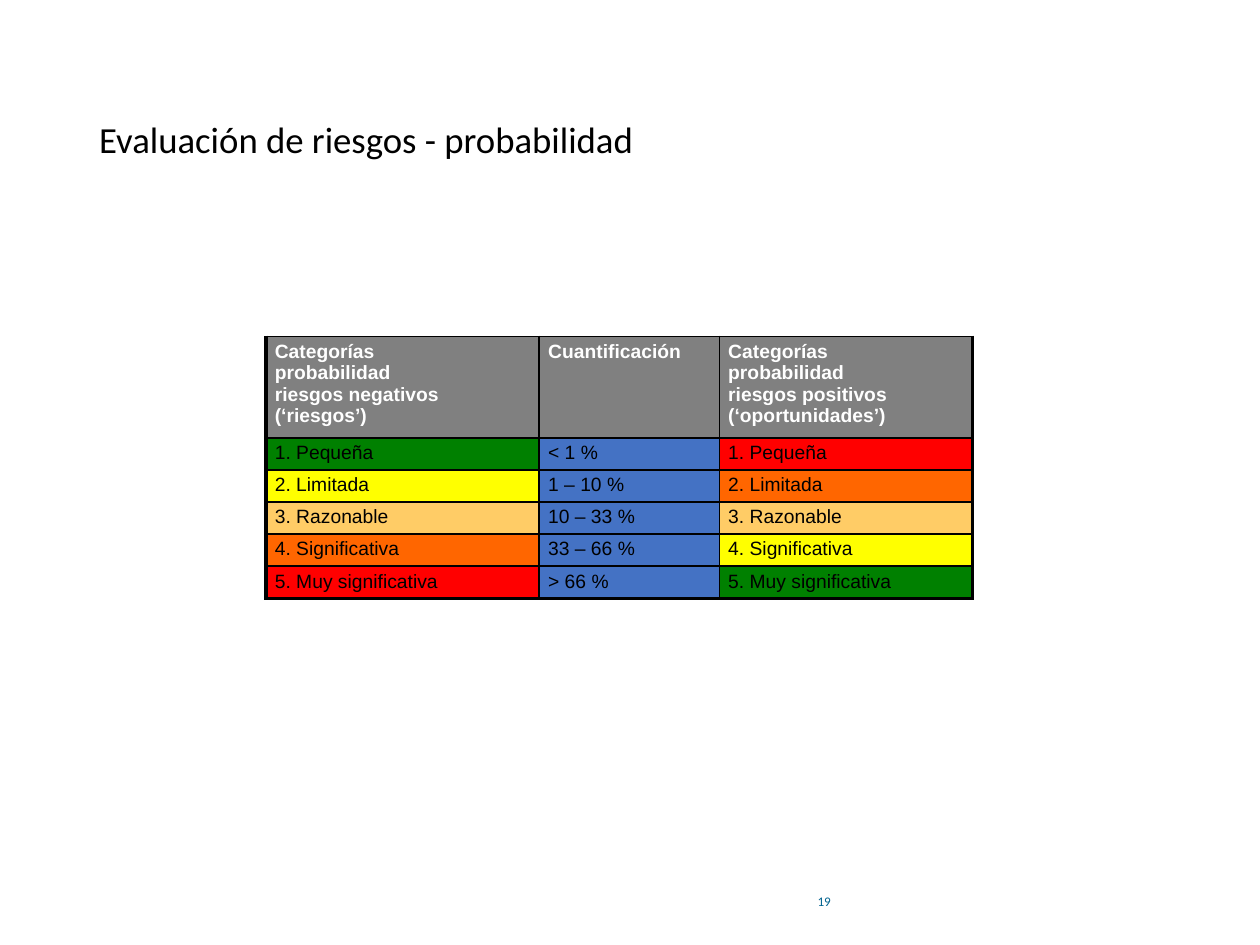
from dataclasses import dataclass

from lxml.etree import SubElement
from pptx import Presentation
from pptx.dml.color import RGBColor
from pptx.enum.text import MSO_ANCHOR, PP_ALIGN
from pptx.oxml.ns import qn
from pptx.util import Cm, Pt

COLORS = {
    "black": "000000", "white": "FFFFFF", "teal": "00638F", "gray": "808080",
    "blue": "4472C4", "green": "008000", "yellow": "FFFF00", "sand": "FFCC66",
    "orange": "FF6600", "red": "FF0000",
}
HEADERS = [
    ["Categorías", "probabilidad", "riesgos negativos (‘riesgos’)"],
    ["Cuantificación"],
    ["Categorías", "probabilidad", "riesgos positivos (‘oportunidades’)"],
]
COLUMN_WIDTHS = [5.51, 3.63, 5.11]
HEADER_HEIGHT, ROW_HEIGHT = 1.98, 0.64
THIN, THICK = 1, 2.25


@dataclass
class Level:
    category: str
    range: str
    color: str


@dataclass
class Label:
    text: str
    left: float
    top: float
    width: float
    height: float
    size: float
    color: str
    align: PP_ALIGN
    spacing: float


LEVELS = [
    Level("1. Pequeña", "< 1 %", "green"),
    Level("2. Limitada", "1 – 10 %", "yellow"),
    Level("3. Razonable", "10 – 33 %", "sand"),
    Level("4. Significativa", "33 – 66 %", "orange"),
    Level("5. Muy significativa", "> 66 %", "red"),
]
LABELS = [
    Label("Evaluación de riesgos - probabilidad", 1.75, 1.02, 21.9, 3.68,
          21, "black", PP_ALIGN.LEFT, 0.9),
    Label("19", 8.41, 17.65, 8.59, 1.02, 7.5, "teal", PP_ALIGN.RIGHT, 1.0),
]


def add_span(para, text: str, font: str, size: float, color: str, bold: bool = False) -> None:
    """Add one formatted run to a paragraph."""
    span = para.add_run()
    span.text = text
    span.font.name = font
    span.font.size = Pt(size)
    span.font.bold = bold
    span.font.color.rgb = RGBColor.from_string(COLORS[color])


def add_label(page, label: Label) -> None:
    """Add a vertically centred text box."""
    box = page.shapes.add_textbox(
        Cm(label.left), Cm(label.top), Cm(label.width), Cm(label.height))
    frame = box.text_frame
    frame.word_wrap = True
    frame.vertical_anchor = MSO_ANCHOR.MIDDLE
    para = frame.paragraphs[0]
    para.alignment = label.align
    para.line_spacing = label.spacing
    add_span(para, label.text, "Calibri", label.size, label.color)


def set_borders(cell, widths: dict[str, float]) -> None:
    """Draw black cell borders with the given widths in points."""
    properties = cell._tc.get_or_add_tcPr()
    for side, width in widths.items():
        line = SubElement(properties, qn(f"a:ln{side}"), w=str(Pt(width)))
        fill = SubElement(line, qn("a:solidFill"))
        SubElement(fill, qn("a:srgbClr"), val=COLORS["black"])


def fill_cell(cell, lines: list[str], fill: str, color: str, bold: bool) -> None:
    """Set the margins, fill and text of a cell."""
    cell.margin_left = cell.margin_right = Cm(0.18)
    cell.margin_top = cell.margin_bottom = Cm(0.09)
    cell.fill.solid()
    cell.fill.fore_color.rgb = RGBColor.from_string(COLORS[fill])
    para = cell.text_frame.paragraphs[0]
    for index, line in enumerate(lines):
        if index:
            para.add_line_break()
        add_span(para, line, "Arial", 11, color, bold)


def add_risk_table(page) -> None:
    """Add the probability table, with colours mirrored for opportunities."""
    rows = [[(lines, "gray") for lines in HEADERS]]
    for level, opposite in zip(LEVELS, reversed(LEVELS)):
        rows.append([([level.category], level.color), ([level.range], "blue"),
                     ([level.category], opposite.color)])
    last_row, last_column = len(rows) - 1, len(COLUMN_WIDTHS) - 1
    table = page.shapes.add_table(
        len(rows), len(COLUMN_WIDTHS), Cm(5.36), Cm(6.78),
        Cm(sum(COLUMN_WIDTHS)), Cm(HEADER_HEIGHT + ROW_HEIGHT * len(LEVELS))).table
    table.first_row = table.horz_banding = False
    for column, width in zip(table.columns, COLUMN_WIDTHS):
        column.width = Cm(width)
    for r, contents in enumerate(rows):
        header = r == 0
        table.rows[r].height = Cm(HEADER_HEIGHT if header else ROW_HEIGHT)
        for c, (lines, fill) in enumerate(contents):
            cell = table.cell(r, c)
            set_borders(cell, {
                "L": THICK if c == 0 else THIN,
                "R": THICK if c == last_column else THIN,
                "T": THIN,
                "B": THICK if r == last_row else THIN,
            })
            fill_cell(cell, lines, fill, "white" if header else "black", header)


def main() -> None:
    """Build and save the slide."""
    deck = Presentation()
    deck.slide_width, deck.slide_height = Cm(25.4), Cm(19.05)
    page = deck.slides.add_slide(deck.slide_layouts[6])
    for label in LABELS:
        add_label(page, label)
    add_risk_table(page)
    deck.save("out.pptx")


if __name__ == "__main__":
    main()
